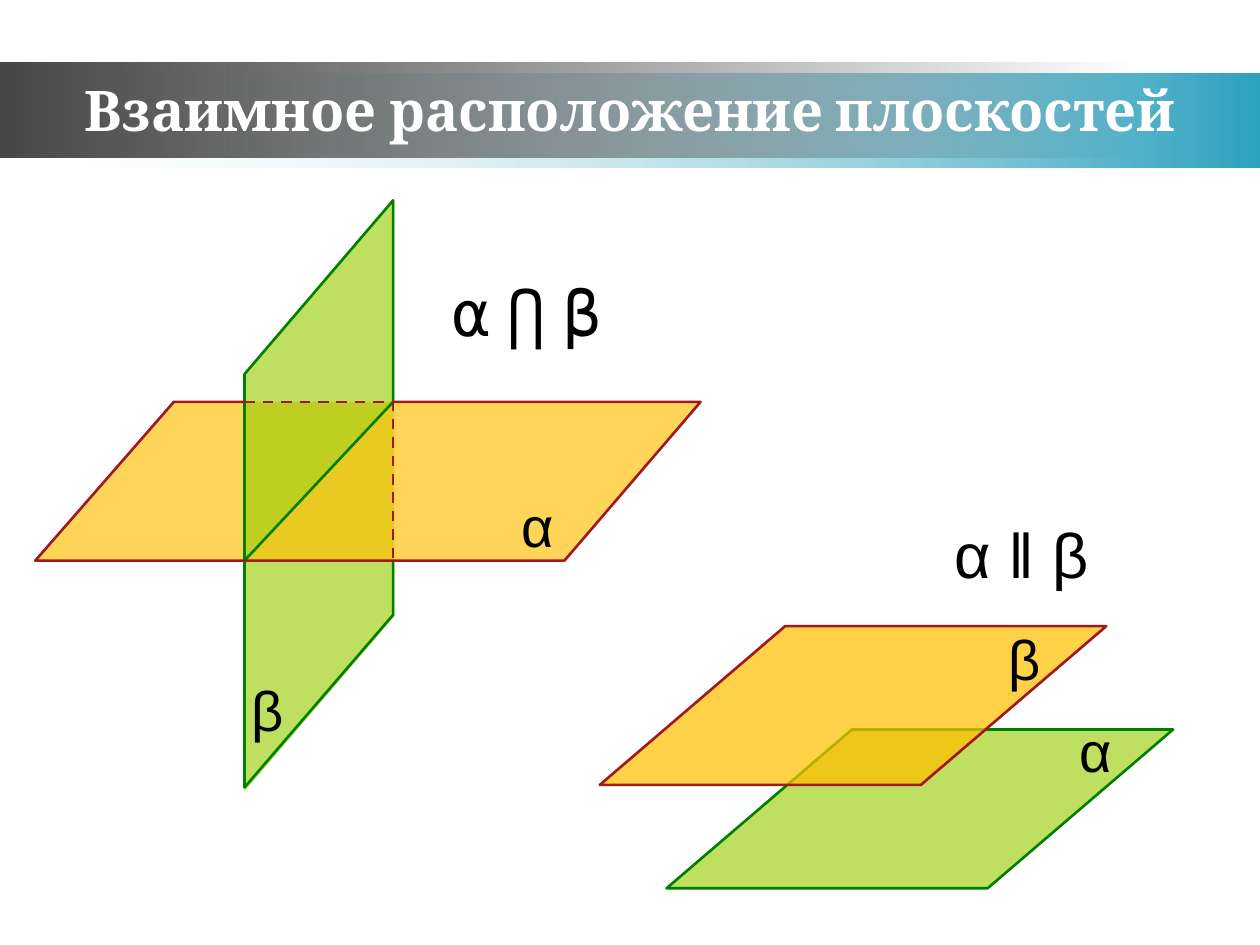
from dataclasses import dataclass
from itertools import groupby

from lxml import etree
from pptx import Presentation
from pptx import util as u
from pptx.dml.color import RGBColor
from pptx.enum import dml, shapes, text
from pptx.oxml.ns import qn


@dataclass(frozen=True)
class Theme:
    ink: str = "000000"
    title_ink: str = "FFFFFF"
    amber: str = "FFC000"
    lime: str = "99CC00"
    red: str = "A3171E"
    green: str = "008000"
    teal: str = "2DA2BF"
    mist: str = "F1F6F8"
    charcoal: str = "464646"
    dark: str = "323232"
    title_font: str = "Cambria"
    label_font: str = "Arial"
    symbol_font: str = "DejaVu Sans Mono"
    label_size: int = 32
    formula_size: int = 36
    line_width: float = 1.5
    slant: float = 1.168


def write_text(frame, content, *, font, size, color, bold=False, space_font=None,
               align=text.PP_ALIGN.LEFT, anchor=text.MSO_ANCHOR.TOP, wrap=True):
    frame.word_wrap = wrap
    frame.auto_size = text.MSO_AUTO_SIZE.SHAPE_TO_FIT_TEXT
    frame.vertical_anchor = anchor
    paragraph = frame.paragraphs[0]
    paragraph.alignment = align
    pieces = [(False, content)]
    if space_font:
        pieces = groupby(content, str.isspace)
    for is_space, piece in pieces:
        run = paragraph.add_run()
        run.text = "".join(piece)
        run.font.name = space_font if is_space else font
        run.font.size = u.Pt(size)
        run.font.bold = bold
        run.font.color.rgb = RGBColor.from_string(color)


def set_alpha(color_element, percent):
    alpha = etree.SubElement(color_element, qn("a:alpha"))
    alpha.set("val", str(percent * 1000))


class SlideBuilder:
    def __init__(self, slide, theme):
        self.slide = slide
        self.theme = theme
        self.canvas = slide.shapes

    def start_group(self):
        self.canvas = self.slide.shapes.add_group_shape().shapes

    def end_group(self):
        self.canvas = self.slide.shapes

    def paint(self, shape, fill=None, opacity=100, line=None, dashed=False):
        shape.shadow.inherit = False
        if fill:
            shape.fill.solid()
            shape.fill.fore_color.rgb = RGBColor.from_string(fill)
            set_alpha(shape.element.spPr.find(".//" + qn("a:srgbClr")), opacity)
        else:
            shape.fill.background()
        if line:
            shape.line.color.rgb = RGBColor.from_string(line)
            shape.line.width = u.Pt(self.theme.line_width)
            if dashed:
                shape.line.dash_style = dml.MSO_LINE.DASH
        else:
            shape.line.fill.background()

    def preset(self, kind, left, top, width, height):
        return self.canvas.add_shape(kind, *map(u.Inches, (left, top, width, height)))

    def band(self, top, width, stops):
        shape = self.preset(shapes.MSO_SHAPE.RECTANGLE, 0, top, width, 0.75)
        self.paint(shape)
        shape.fill.gradient()
        shape.fill.gradient_angle = 0
        for position, (stop, (color, opacity)) in enumerate(zip(shape.fill.gradient_stops, stops)):
            stop.position = position
            stop.color.rgb = RGBColor.from_string(color)
        colors = shape.element.spPr.iter(qn("a:srgbClr"))
        for element, (color, opacity) in zip(colors, stops):
            set_alpha(element, opacity)

    def plane(self, left, top, width, height, upright=False, **style):
        shape = self.preset(shapes.MSO_SHAPE.PARALLELOGRAM, left, top, width, height)
        shape.adjustments[0] = self.theme.slant
        if upright:
            shape.rotation = 90
            shape.element.spPr.find(qn("a:xfrm")).set("flipV", "1")
        self.paint(shape, **style)

    def outline(self, points, close=False, **style):
        start, *rest = [(u.Inches(x), u.Inches(y)) for x, y in points]
        builder = self.canvas.build_freeform(*start)
        builder.add_line_segments(rest, close=close)
        self.paint(builder.convert_to_shape(), **style)

    def label(self, content, left, top, width, height=0.64, **style):
        box = self.canvas.add_textbox(*map(u.Inches, (left, top, width, height)))
        defaults = dict(font=self.theme.label_font, size=self.theme.label_size,
                        color=self.theme.ink)
        write_text(box.text_frame, content, **{**defaults, **style})

    def title(self, content):
        title = self.slide.shapes.title
        title.left, title.top, title.width, title.height = map(u.Inches, (0, 0.55, 10, 0.64))
        write_text(title.text_frame, content, font=self.theme.title_font,
                   size=self.theme.label_size, color=self.theme.title_ink,
                   bold=True, align=text.PP_ALIGN.CENTER)
        title.element.getparent().append(title.element)


def draw_parallel_planes(builder, theme):
    builder.start_group()
    builder.plane(5.29, 5.79, 4.02, 1.26, fill=theme.lime, opacity=62, line=theme.green)
    builder.plane(4.76, 4.97, 4.02, 1.26, fill=theme.amber, opacity=72, line=theme.red)
    builder.label("α", 8.47, 5.63, 0.54, anchor=text.MSO_ANCHOR.MIDDLE)
    builder.label("β", 7.91, 4.91, 0.46, wrap=False)
    builder.end_group()


def draw_crossing_planes(builder, theme):
    front, back = (1.94, 4.45), (3.12, 3.19)
    back_left, front_left = (1.38, 3.19), (0.28, 4.45)
    back_right, front_right = (5.56, 3.19), (4.48, 4.45)
    hidden_left, hidden_right = (1.94, 3.19), (3.12, 4.45)

    builder.start_group()
    builder.outline([back, back_left, front_left, front], close=True,
                    fill=theme.amber, opacity=65)
    builder.plane(0.19, 3.34, 4.69, 1.19, upright=True, fill=theme.lime, opacity=62)
    builder.outline([front, back, back_right, front_right], close=True,
                    fill=theme.amber, opacity=65)
    builder.outline([front, back, (3.12, 1.59), (1.94, 2.97), (1.94, 6.25),
                     (3.12, 4.88), hidden_right], line=theme.green)
    builder.outline([back, back_right, front_right, front_left, back_left, hidden_left],
                    line=theme.red)
    builder.outline([hidden_left, back, hidden_right], line=theme.red, dashed=True)
    builder.label("α", 4.04, 3.85, 0.46, wrap=False)
    builder.label("β", 1.9, 5.31, 0.46, wrap=False)
    builder.end_group()


def main():
    theme = Theme()
    presentation = Presentation()
    presentation.slide_width = u.Inches(10)
    presentation.slide_height = u.Inches(7.5)
    slide = presentation.slides.add_slide(presentation.slide_layouts[5])
    builder = SlideBuilder(slide, theme)

    builder.band(0.58, 10, [(theme.mist, 0), (theme.teal, 100)])
    builder.band(0.5, 9, [(theme.charcoal, 100), (theme.dark, 0)])
    builder.label("α ‖ β", 7.48, 4.04, 1.7, 0.71, size=theme.formula_size)
    draw_parallel_planes(builder, theme)
    builder.label("α ⋂ β", 3.49, 2.12, 1.51, 0.71, size=theme.formula_size,
                  font=theme.symbol_font, space_font=theme.label_font)
    builder.title("Взаимное расположение плоскостей")
    draw_crossing_planes(builder, theme)

    presentation.save("out.pptx")


if __name__ == "__main__":
    main()
